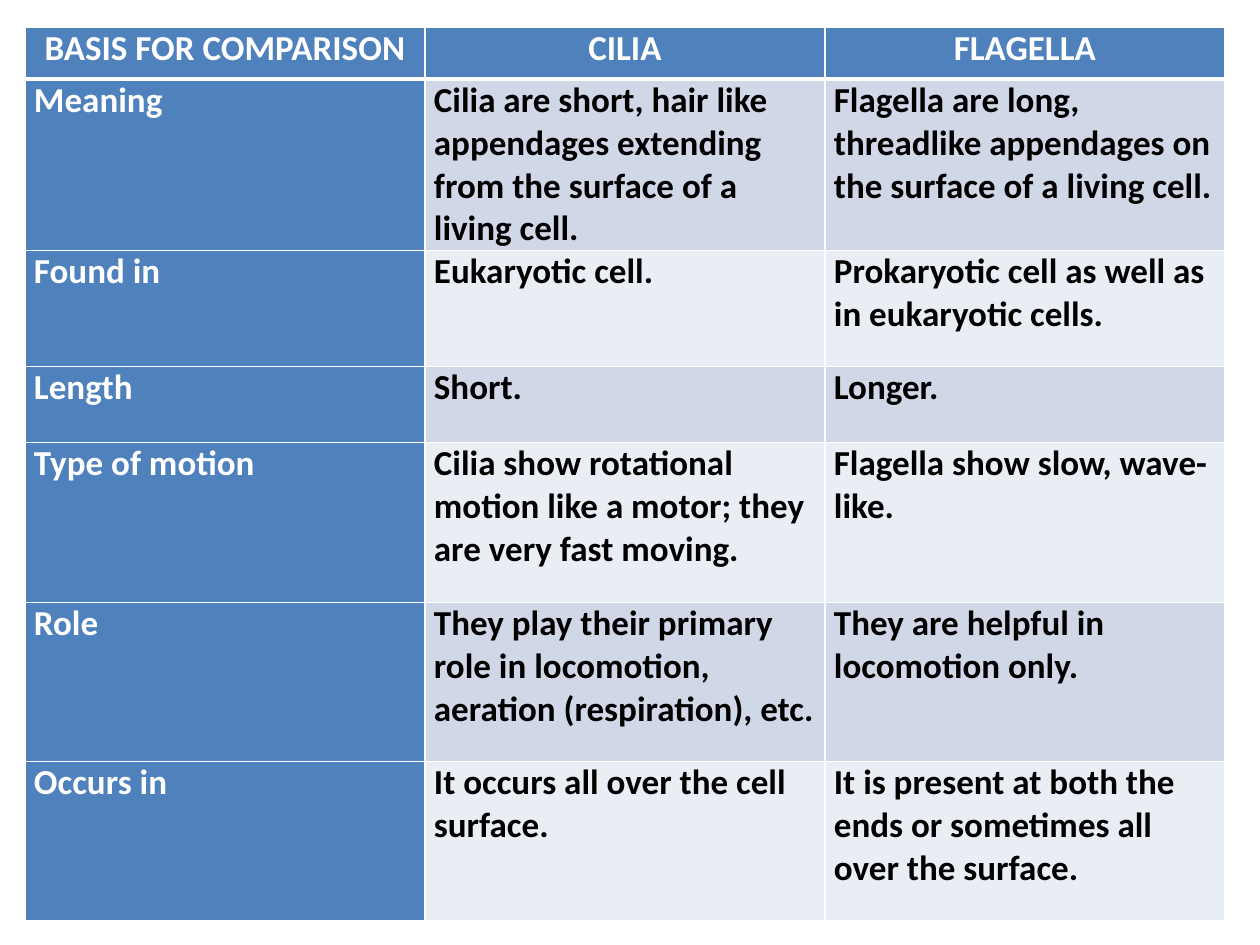
import pptx
import pptx.dml.color
import pptx.enum.text
import pptx.oxml
import pptx.oxml.ns
import pptx.util

PX = 914400 // 126
LEFT, TOP = 25, 27
COLUMN_WIDTH = 400
ROW_HEIGHTS = [52, 160, 116, 76, 160, 159, 159]
BLUE, WHITE, BLACK = "4F81BD", "FFFFFF", "000000"
BANDS = ["D0D8E8", "E9EDF4"]

COMPARISON = [
    ("BASIS FOR COMPARISON", "CILIA", "FLAGELLA"),
    ("Meaning",
     "Cilia are short, hair like appendages extending from the surface of a living cell.",
     "Flagella are long, threadlike appendages on the surface of a living cell."),
    ("Found in", "Eukaryotic cell.",
     "Prokaryotic cell as well as in eukaryotic cells."),
    ("Length", "Short.", "Longer."),
    ("Type of motion",
     "Cilia show rotational motion like a motor; they are very fast moving.",
     "Flagella show slow, wave-like."),
    ("Role",
     "They play their primary role in locomotion, aeration (respiration), etc.",
     "They are helpful in locomotion only."),
    ("Occurs in", "It occurs all over the cell surface.",
     "It is present at both the ends or sometimes all over the surface."),
]


def px(length):
    return pptx.util.Emu(length * PX)


def rgb(colour):
    return pptx.dml.color.RGBColor.from_string(colour)


def write(frame, text, *, colour, centred=False, size=20, font="Calibri", bold=True):
    paragraph = frame.paragraphs[0]
    paragraph.space_after = pptx.util.Pt(12)
    if centred:
        paragraph.alignment = pptx.enum.text.PP_ALIGN.CENTER
    run = paragraph.add_run()
    run.text = text
    run.font.name = font
    run.font.size = pptx.util.Pt(size)
    run.font.bold = bold
    run.font.color.rgb = rgb(colour)


def set_borders(cell, **widths):
    """Draw white borders; widths are in points, keyed by side (L, R, T, B)."""
    properties = cell._tc.get_or_add_tcPr()
    for position, (side, width) in enumerate(widths.items()):
        border = pptx.oxml.parse_xml(
            f'<a:ln{side} {pptx.oxml.ns.nsdecls("a")} w="{pptx.util.Pt(width)}">'
            f'<a:solidFill><a:srgbClr val="{WHITE}"/></a:solidFill></a:ln{side}>')
        properties.insert(position, border)


def format_cell(cell, text, row, column):
    header = row == 0
    label = header or column == 0
    cell.margin_left = cell.margin_right = px(9)
    cell.margin_top = cell.margin_bottom = 0
    cell.fill.solid()
    cell.fill.fore_color.rgb = rgb(BLUE if label else BANDS[(row - 1) % 2])
    set_borders(cell, L=1, R=1, T=3 if row == 1 else 1, B=3 if header else 1)
    write(cell.text_frame, text, colour=WHITE if label else BLACK, centred=header)


def add_comparison(slide):
    columns = len(COMPARISON[0])
    table = slide.shapes.add_table(
        len(COMPARISON), columns, px(LEFT), px(TOP),
        px(COLUMN_WIDTH * columns), px(sum(ROW_HEIGHTS))).table
    for column in table.columns:
        column.width = px(COLUMN_WIDTH)
    for row, texts in enumerate(COMPARISON):
        table.rows[row].height = px(ROW_HEIGHTS[row])
        for column, text in enumerate(texts):
            format_cell(table.cell(row, column), text, row, column)


def main():
    deck = pptx.Presentation()
    deck.slide_width, deck.slide_height = px(1260), px(945)
    add_comparison(deck.slides.add_slide(deck.slide_layouts[6]))
    deck.save("out.pptx")


if __name__ == "__main__":
    main()
